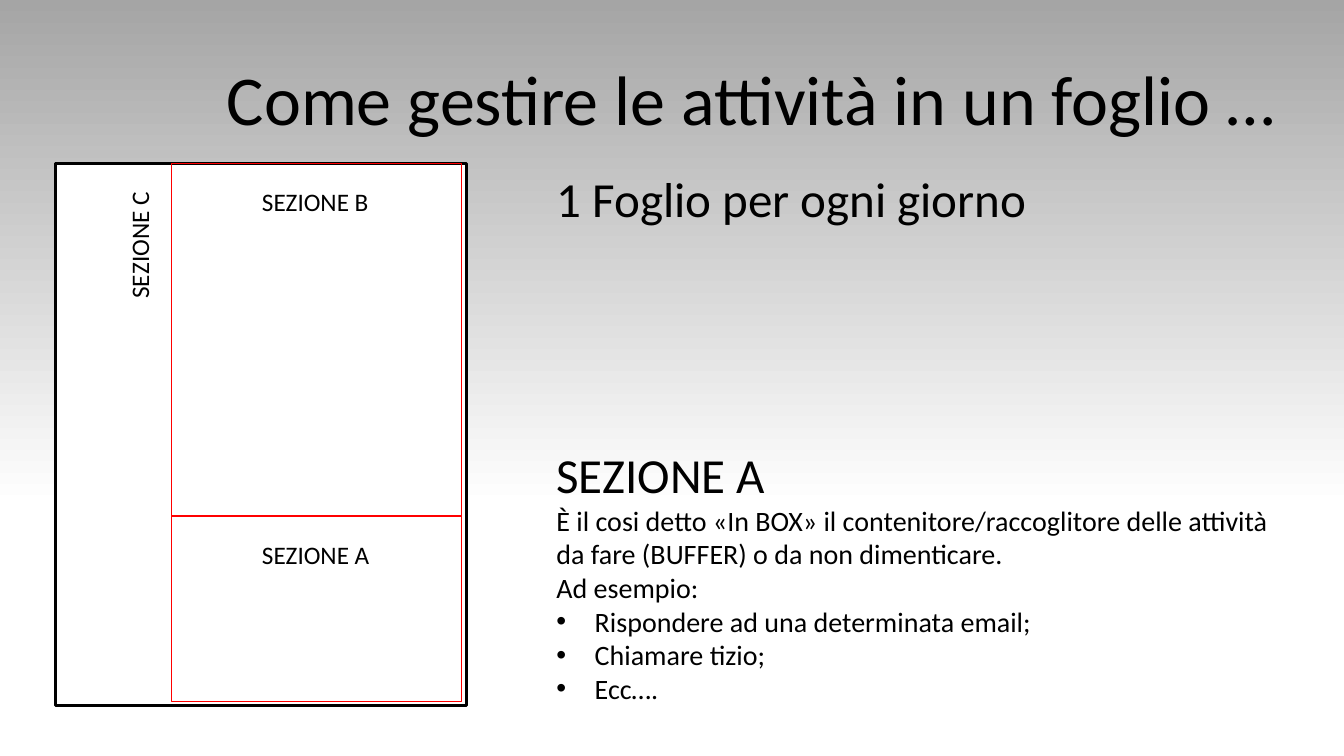
from copy import deepcopy
from dataclasses import dataclass

from lxml import etree
from pptx import Presentation
from pptx.dml.color import RGBColor
from pptx.enum.shapes import MSO_SHAPE
from pptx.enum.text import MSO_AUTO_SIZE, PP_ALIGN
from pptx.oxml.ns import qn
from pptx.util import Inches, Pt

RECTANGLE = MSO_SHAPE.RECTANGLE
GROW = MSO_AUTO_SIZE.SHAPE_TO_FIT_TEXT
LEFT, RIGHT = PP_ALIGN.LEFT, PP_ALIGN.RIGHT


@dataclass(frozen=True)
class Theme:
    font: str = "Calibri"
    ink: RGBColor = RGBColor(0x00, 0x00, 0x00)
    paper: RGBColor = RGBColor(0xFF, 0xFF, 0xFF)
    shade: RGBColor = RGBColor(0xA5, 0xA5, 0xA5)
    section_line: RGBColor = RGBColor(0xFF, 0x00, 0x00)
    title: int = 50
    heading: int = 35
    body: int = 20
    label: int = 18


THEME = Theme()
BULLET_INDENT = Inches(0.38)


def paint_background(slide):
    """White up to a third of the height, then fading to grey at the top."""
    fill = slide.background.fill
    fill.gradient()
    fill.gradient_angle = 90
    bottom, top = fill.gradient_stops
    bottom.color.rgb, bottom.position = THEME.paper, 0
    top.color.rgb, top.position = THEME.shade, 1
    stops = slide.element.find(".//" + qn("a:gsLst"))
    middle = deepcopy(stops[0])
    middle.set("pos", "33000")
    stops.insert(1, middle)


def add_frame(slide, left, top, width, height, line_color, line_width, fill=None):
    frame = slide.shapes.add_shape(
        RECTANGLE, Inches(left), Inches(top), Inches(width), Inches(height))
    frame.shadow.inherit = False
    if fill is None:
        frame.fill.background()
    else:
        frame.fill.solid()
        frame.fill.fore_color.rgb = fill
    frame.line.color.rgb = line_color
    frame.line.width = Pt(line_width)


def add_bullet(paragraph):
    properties = paragraph._p.get_or_add_pPr()
    properties.set("marL", str(BULLET_INDENT))
    properties.set("indent", str(-BULLET_INDENT))
    etree.SubElement(properties, qn("a:buFont")).set("typeface", "Arial")
    etree.SubElement(properties, qn("a:buChar")).set("char", "•")


def add_text(slide, left, top, width, height, lines, wrap=False, align=LEFT, rotation=0):
    """Each line is (text, size, bulleted)."""
    box = slide.shapes.add_textbox(
        Inches(left), Inches(top), Inches(width), Inches(height))
    box.rotation = rotation
    frame = box.text_frame
    frame.word_wrap = wrap
    frame.auto_size = GROW
    for index, (text, size, bulleted) in enumerate(lines):
        paragraph = frame.add_paragraph() if index else frame.paragraphs[0]
        paragraph.text = text
        paragraph.alignment = align
        if bulleted:
            add_bullet(paragraph)
        paragraph.font.name = THEME.font
        paragraph.font.size = Pt(size)
        paragraph.font.color.rgb = THEME.ink


def add_sheet(slide):
    """The daily sheet with its three sections."""
    sheet_top, section_left, section_width = 1.62, 1.7, 2.88
    add_frame(slide, 0.55, sheet_top, 4.08, 5.38, THEME.ink, 2, THEME.paper)
    sections = [("SEZIONE A", 5.12, 1.84), ("SEZIONE B", sheet_top, 3.5)]
    for name, top, height in sections:
        add_frame(slide, section_left, top, section_width, height,
                  THEME.section_line, 1)
        add_text(slide, 2.5, top + 0.18, 1.28, 0.4, [(name, THEME.label, False)])
    add_text(slide, 0.75, 2.23, 1.26, 0.4,
             [("SEZIONE C", THEME.label, False)], rotation=270)


def main():
    presentation = Presentation()
    presentation.slide_width = Inches(13.33)
    presentation.slide_height = Inches(7.5)
    slide = presentation.slides.add_slide(presentation.slide_layouts[6])
    paint_background(slide)

    # Title
    add_text(slide, 2.03, 0.5, 10.88, 0.94,
             [("Come gestire le attività in un foglio … ", THEME.title, False)],
             align=RIGHT)

    # Sheet diagram
    add_sheet(slide)

    # Explanation
    text_left = 5.42
    add_text(slide, text_left, 1.62, 4.91, 0.69,
             [("1 Foglio per ogni giorno", THEME.heading, False)])
    add_text(slide, text_left, 4.36, 7.49, 2.71, [
        ("SEZIONE A", THEME.heading, False),
        ("È il cosi detto «In BOX» il contenitore/raccoglitore delle attività "
         "da fare (BUFFER) o da non dimenticare.", THEME.body, False),
        ("Ad esempio:", THEME.body, False),
        ("Rispondere ad una determinata email;", THEME.body, True),
        ("Chiamare tizio;", THEME.body, True),
        ("Ecc….", THEME.body, True),
    ], wrap=True)

    presentation.save("out.pptx")


if __name__ == "__main__":
    main()
